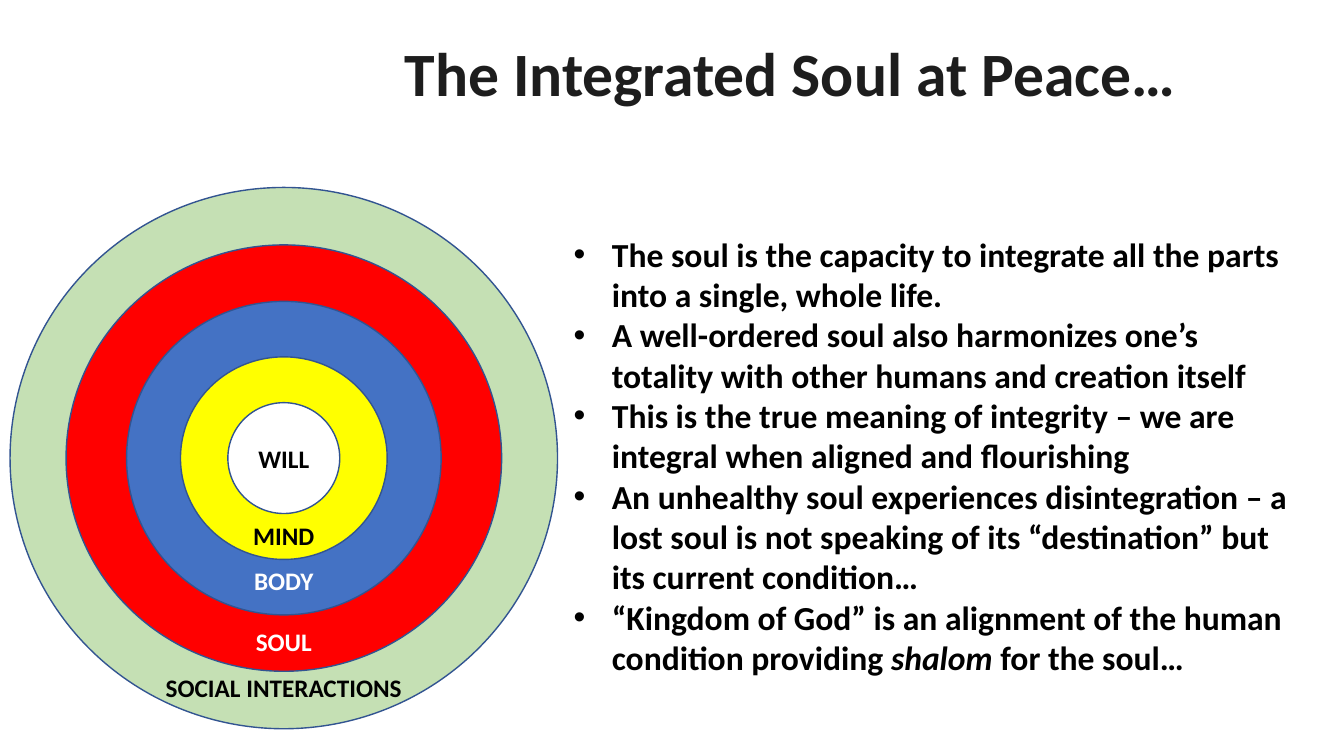
from lxml.etree import SubElement
from pptx import Presentation
from pptx.dml.color import RGBColor
from pptx.enum.shapes import MSO_SHAPE
from pptx.enum.text import MSO_ANCHOR, MSO_AUTO_SIZE, PP_ALIGN
from pptx.oxml.ns import qn
from pptx.util import Inches, Pt

HUES = {
    "green": "C5E0B4", "red": "FF0000", "blue": "4472C4", "yellow": "FFFF00",
    "white": "FFFFFF", "black": "000000", "edge": "325491", "title": "1D1D1D",
}

# Label, width, height, fill, text colour, label drop below the centre
RINGS = [
    ("SOCIAL INTERACTIONS", 5.43, 5.37, "green", "black", 2.28),
    ("SOUL", 4.32, 4.23, "red", "white", 1.82),
    ("BODY", 3.12, 3.11, "blue", "white", 1.21),
    ("MIND", 2.05, 2.01, "yellow", "black", 0.77),
    ("WILL", 1.11, 1.1, "white", "black", 0),
]

# Each point is a list of (text, italic) runs
POINTS = [
    [("The soul is the capacity to integrate all the parts into a single, "
      "whole life.", False)],
    [("A well-ordered soul also harmonizes one’s totality with other humans "
      "and creation itself", False)],
    [("This is the true meaning of integrity – we are integral when aligned "
      "and flourishing", False)],
    [("An unhealthy soul experiences disintegration – a lost soul is not "
      "speaking of its “destination” but its current condition…", False)],
    [("“Kingdom of God” is an alignment of the human condition providing ", False),
     ("shalom", True), (" for the soul…", False)],
]


def paint(hue):
    return RGBColor.from_string(HUES[hue])


def add_run(para, text, size, hue, slant=False):
    run = para.add_run()
    run.text = text
    font = run.font
    font.name, font.size = "Calibri", Pt(size)
    font.bold, font.italic = True, slant
    font.color.rgb = paint(hue)


def add_title(slide, left, top, width, height):
    title = slide.shapes.title
    title.left, title.top = Inches(left), Inches(top)
    title.width, title.height = Inches(width), Inches(height)
    frame = title.text_frame
    frame.auto_size = MSO_AUTO_SIZE.NONE
    frame.vertical_anchor = MSO_ANCHOR.MIDDLE
    para = frame.paragraphs[0]
    para.alignment = PP_ALIGN.CENTER
    para.line_spacing = 0.9
    add_run(para, "The Integrated Soul at Peace…", 44, "title")


def add_label(holder, text, hue):
    frame = holder.text_frame
    frame.word_wrap = False
    frame.vertical_anchor = MSO_ANCHOR.MIDDLE
    para = frame.paragraphs[0]
    para.alignment = PP_ALIGN.CENTER
    add_run(para, text, 18, hue)


def add_rings(slide, left, top, width, height):
    mid_x, mid_y = left + width / 2, top + height / 2
    for text, wide, high, fill, hue, drop in RINGS:
        ring = slide.shapes.add_shape(
            MSO_SHAPE.OVAL, Inches(mid_x - wide / 2), Inches(mid_y - high / 2),
            Inches(wide), Inches(high))
        ring.shadow.inherit = False
        ring.fill.solid()
        ring.fill.fore_color.rgb = paint(fill)
        ring.line.color.rgb = paint("edge")
        ring.line.width = Pt(1)
        # Outer labels sit low in their band, the core label in the oval
        holder = ring
        if drop:
            holder = slide.shapes.add_textbox(
                Inches(mid_x - 1.4), Inches(mid_y + drop - 0.2),
                Inches(2.8), Inches(0.4))
        add_label(holder, text, hue)


def add_points(slide, left, top, width, height):
    box = slide.shapes.add_textbox(
        Inches(left), Inches(top), Inches(width), Inches(height))
    frame = box.text_frame
    frame.word_wrap = True
    for num, runs in enumerate(POINTS):
        para = frame.add_paragraph() if num else frame.paragraphs[0]
        props = para._p.get_or_add_pPr()
        props.set("marL", str(Inches(0.38)))
        props.set("indent", str(-Inches(0.38)))
        SubElement(props, qn("a:buFont")).set("typeface", "Arial")
        SubElement(props, qn("a:buChar")).set("char", "•")
        for text, slant in runs:
            add_run(para, text, 24, "black", slant)


def main():
    deck = Presentation()
    deck.slide_width, deck.slide_height = Inches(13.33), Inches(7.5)
    slide = deck.slides.add_slide(deck.slide_layouts[5])
    add_title(slide, 3.02, 0.13, 9.64, 1.25)
    add_rings(slide, 0.1, 1.86, 5.43, 5.37)
    add_points(slide, 5.59, 2.27, 7.28, 4.54)
    deck.save("out.pptx")


if __name__ == "__main__":
    main()
